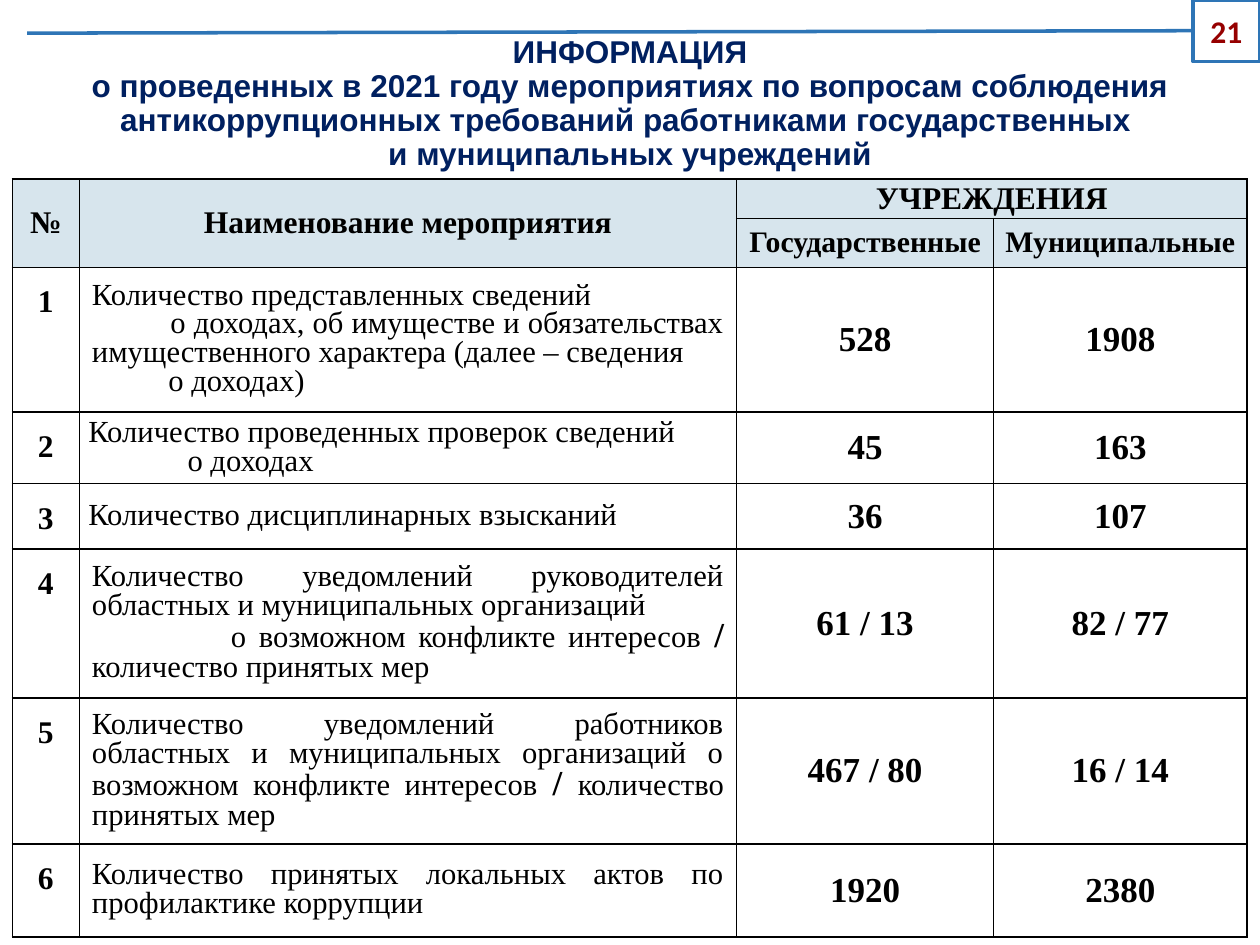
"""Build a slide with a table of anti-corruption measures in public institutions."""
import pptx
import pptx.dml.color
import pptx.enum.shapes
import pptx.enum.text
import pptx.oxml.ns
import pptx.util
from lxml import etree

Cm, Pt = pptx.util.Cm, pptx.util.Pt
RGBColor = pptx.dml.color.RGBColor
ALIGN, ANCHOR = pptx.enum.text.PP_ALIGN, pptx.enum.text.MSO_ANCHOR

NAVY = RGBColor(0x00, 0x20, 0x60)
BLACK = RGBColor(0x00, 0x00, 0x00)
WHITE = RGBColor(0xFF, 0xFF, 0xFF)
PALE_BLUE = RGBColor(0xD7, 0xE5, 0xED)
BLUE = RGBColor(0x2E, 0x75, 0xB6)
DARK_RED = RGBColor(0x96, 0x00, 0x00)
SERIF = "Times New Roman"

HEADING = [
    "ИНФОРМАЦИЯ",
    "о проведенных в 2021 году мероприятиях по вопросам соблюдения "
    "антикоррупционных требований работниками государственных ",
    "и муниципальных учреждений",
]
PAGE_NUMBER = "21"
HEADERS = [
    (0, 0, "№", 18, False),
    (0, 1, "Наименование мероприятия", 18, False),
    (0, 2, "УЧРЕЖДЕНИЯ", 18, True),
    (1, 2, "Государственные", 17, True),
    (1, 3, "Муниципальные", 17, True),
]
MERGES = [((0, 0), (1, 0)), ((0, 1), (1, 1)), ((0, 2), (0, 3))]
# fmt: off
MEASURES = [
    ([(0, ["Количество представленных сведений"]),
      (1.58, ["о доходах, об имуществе и обязательствах имущественного характера (далее – сведения"]),
      (1.54, ["о доходах)"])], False, "528", "1908"),
    ([(0, ["Количество проведенных проверок сведений"]),
      (2, ["о доходах"])], True, "45", "163"),
    ([(0, ["Количество дисциплинарных взысканий"])], True, "36", "107"),
    ([(0, ["Количество уведомлений руководителей областных и муниципальных организаций"]),
      (2.8, ["о возможном конфликте интересов ", "/ ", "количество принятых мер"])],
     False, "61 / 13", "82 / 77"),
    ([(0, ["Количество уведомлений работников областных и муниципальных организаций "
           "о возможном конфликте интересов ", "/ ", "количество принятых мер"])],
     False, "467 / 80", "16 / 14"),
    ([(0, ["Количество принятых локальных актов по профилактике коррупции"])],
     False, "1920", "2380"),
]
COLUMN_WIDTHS = [1.35, 13.25, 5.18, 5.11]
ROW_HEIGHTS = [0.79, 0.99, 2.92, 1.44, 1.32, 3, 2.94, 1.88]


def add_run(paragraph, text, size, color=BLACK, font=SERIF, bold=True):
    run = paragraph.add_run()
    run.text = text
    run.font.size, run.font.name, run.font.bold = Pt(size), font, bold
    run.font.color.rgb = color


def style_cell(cell, fill):
    properties = cell._tc.get_or_add_tcPr()
    for side in ("a:lnL", "a:lnR", "a:lnT", "a:lnB"):
        border = etree.SubElement(properties, pptx.oxml.ns.qn(side), w=str(Pt(1)))
        solid = etree.SubElement(border, pptx.oxml.ns.qn("a:solidFill"))
        etree.SubElement(solid, pptx.oxml.ns.qn("a:srgbClr"), val=str(BLACK))
    cell.fill.solid()
    cell.fill.fore_color.rgb = fill
    cell.vertical_anchor = ANCHOR.MIDDLE


def tighten(cell):
    cell.margin_left = cell.margin_right = Cm(0.18)
    cell.margin_top = cell.margin_bottom = 0


def write_centred(cell, text, size, tight=True):
    if tight:
        tighten(cell)
    paragraph = cell.text_frame.paragraphs[0]
    paragraph.alignment = ALIGN.CENTER
    add_run(paragraph, text, size)
    return paragraph


def write_measure(cell, parts, tight):
    if tight:
        tighten(cell)
    for index, (indent, texts) in enumerate(parts):
        frame = cell.text_frame
        paragraph = frame.add_paragraph() if index else frame.paragraphs[0]
        paragraph.alignment, paragraph.line_spacing = ALIGN.JUSTIFY, 0.85
        paragraph._p.get_or_add_pPr().set("indent", str(Cm(indent)))
        for text in texts:
            slash = text == "/ "
            add_run(paragraph, text, 20 if slash else 17.5, bold=slash)


def add_heading(slide):
    heading = slide.shapes.title
    heading.left, heading.top, heading.width, heading.height = 0, Cm(0.61), Cm(25.4), Cm(3)
    frame = heading.text_frame
    frame.word_wrap, frame.vertical_anchor = True, ANCHOR.MIDDLE
    paragraph = frame.paragraphs[0]
    paragraph.alignment, paragraph.line_spacing = ALIGN.CENTER, 0.9
    for index, line in enumerate(HEADING):
        if index:
            paragraph.add_line_break()
        add_run(paragraph, line, 18, NAVY, "Arial")


def add_measures(slide):
    table = slide.shapes.add_table(
        len(ROW_HEIGHTS), len(COLUMN_WIDTHS), Cm(0.25), Cm(3.61),
        Cm(sum(COLUMN_WIDTHS)), Cm(sum(ROW_HEIGHTS))).table
    for column, width in zip(table.columns, COLUMN_WIDTHS):
        column.width = Cm(width)
    for index, (row, height) in enumerate(zip(table.rows, ROW_HEIGHTS)):
        row.height = Cm(height)
        for cell in row.cells:
            style_cell(cell, PALE_BLUE if index < 2 else WHITE)
    for first, last in MERGES:
        table.cell(*first).merge(table.cell(*last))
    for row, column, text, size, tight in HEADERS:
        write_centred(table.cell(row, column), text, size, tight)
    for number, (parts, tight, state, municipal) in enumerate(MEASURES, 1):
        number_cell, measure_cell, state_cell, municipal_cell = table.rows[number + 1].cells
        number_cell.vertical_anchor = ANCHOR.TOP
        write_centred(number_cell, str(number), 18).line_spacing = 1.5
        write_measure(measure_cell, parts, tight)
        write_centred(state_cell, state, 20)
        write_centred(municipal_cell, municipal, 20)


def add_page_number(slide):
    callout = slide.shapes.add_shape(
        pptx.enum.shapes.MSO_SHAPE.LINE_CALLOUT_1, Cm(24.05), 0, Cm(1.35), Cm(1.24))
    for index, value in enumerate([0.5, -0.01, 0.54, -17.41]):
        callout.adjustments[index] = value
    callout.shadow.inherit = False
    callout.fill.background()
    callout.line.color.rgb, callout.line.width = BLUE, Pt(2)
    callout.text_frame.vertical_anchor = ANCHOR.MIDDLE
    paragraph = callout.text_frame.paragraphs[0]
    paragraph.alignment = ALIGN.CENTER
    add_run(paragraph, PAGE_NUMBER, 18, DARK_RED, "Calibri")


def main():
    deck = pptx.Presentation()
    deck.slide_width, deck.slide_height = Cm(25.4), Cm(19.05)
    slide = deck.slides.add_slide(deck.slide_layouts.get_by_name("Title Only"))
    add_heading(slide)
    add_measures(slide)
    add_page_number(slide)
    deck.save("out.pptx")


if __name__ == "__main__":
    main()
